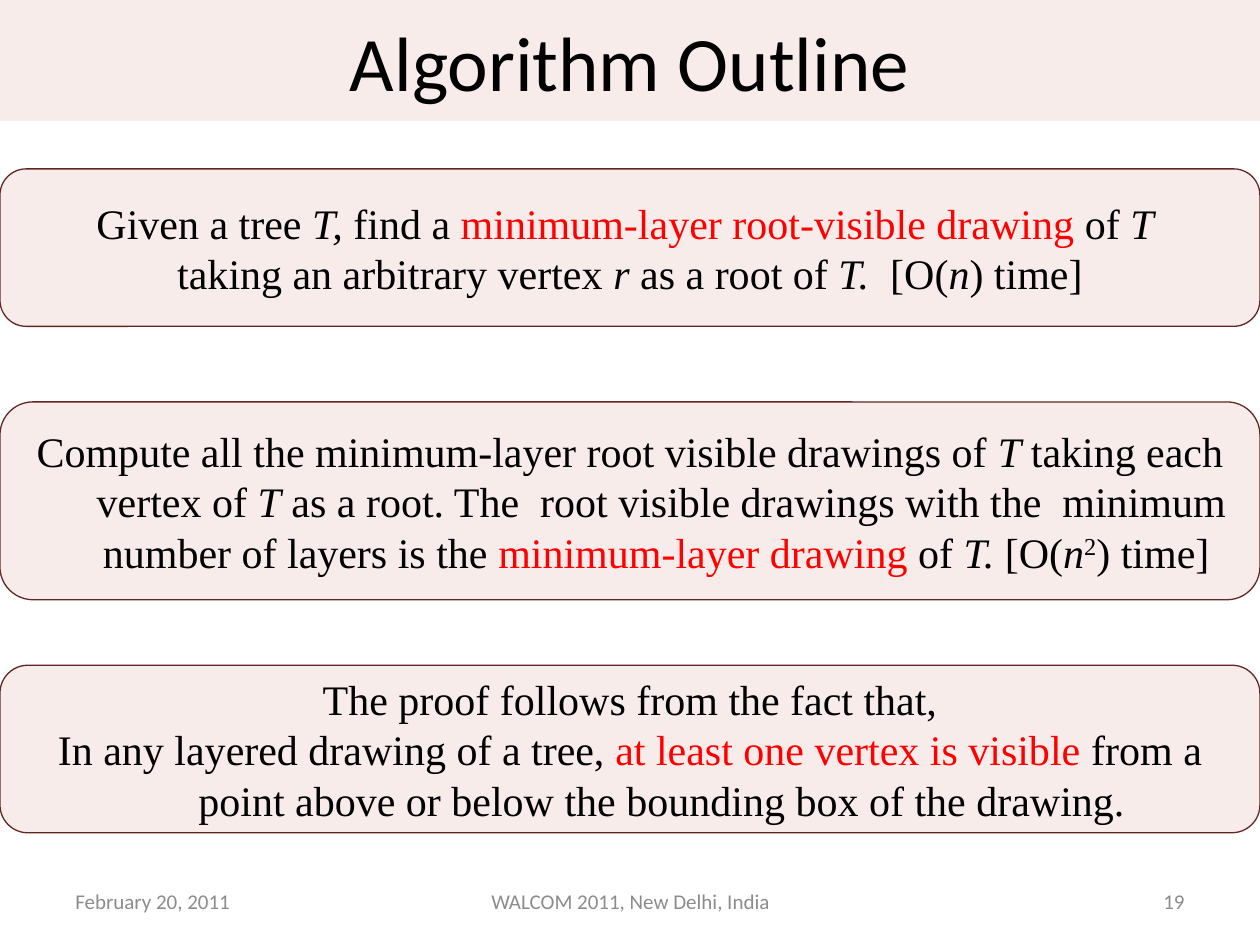
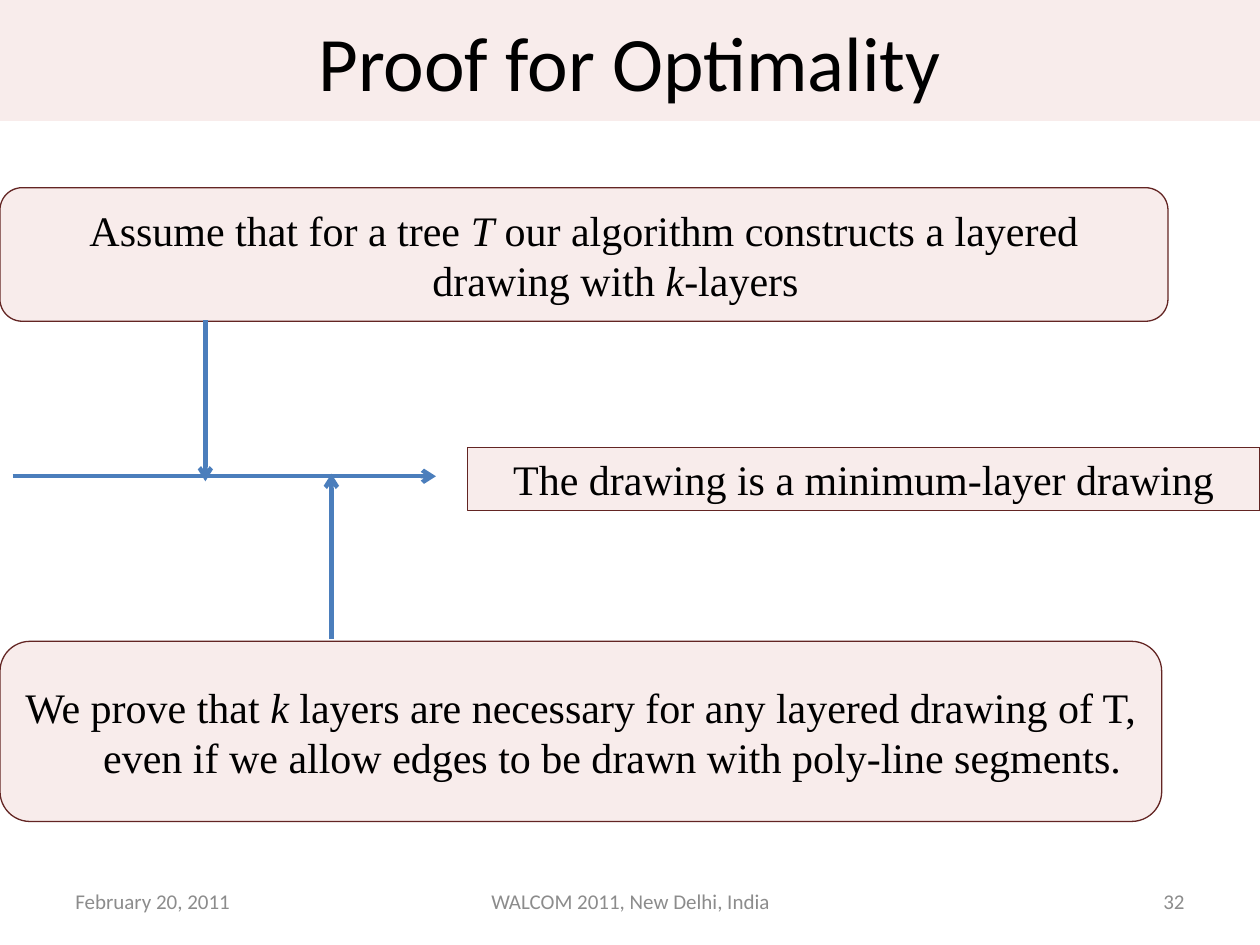
from lxml.etree import SubElement
from pptx import Presentation
from pptx.dml.color import RGBColor
from pptx.enum.shapes import MSO_CONNECTOR, MSO_SHAPE
from pptx.enum.text import MSO_ANCHOR, PP_ALIGN
from pptx.oxml.ns import qn
from pptx.util import Inches, Pt

COLORS = {
    "panel": "E6B9B8",
    "border": "632523",
    "text": "000000",
    "key": "FF0000",
    "footer": "8C8C8C",
    "arrow": "4B7EBC",
}
ITALIC = {"italic": True}
KEY = {"color": "key"}
SUPERSCRIPT = {"baseline": 30000}


def rgb(name):
    return RGBColor.from_string(COLORS[name])


def add_run(paragraph, text, font, size, color, italic=False, baseline=None):
    run = paragraph.add_run()
    run.text = text
    run.font.name = font
    run.font.size = Pt(size)
    run.font.italic = italic
    run.font.color.rgb = rgb(color)
    if baseline:
        run.font._element.set("baseline", str(baseline))


def write_text(frame, paragraphs, font="Calibri", size=12, color="text",
               align=PP_ALIGN.CENTER, hanging=0):
    frame.word_wrap = True
    frame.vertical_anchor = MSO_ANCHOR.MIDDLE
    for index, pieces in enumerate(paragraphs):
        paragraph = frame.add_paragraph() if index else frame.paragraphs[0]
        paragraph.alignment = align
        if hanging:
            properties = paragraph._p.get_or_add_pPr()
            properties.set("marL", str(Inches(hanging)))
            properties.set("indent", str(-Inches(hanging)))
        for piece in pieces:
            text, style = (piece, {}) if isinstance(piece, str) else piece
            add_run(paragraph, text, **{"font": font, "size": size, "color": color, **style})


class Deck:
    def __init__(self):
        self.presentation = Presentation()
        self.presentation.slide_width = Inches(10)
        self.presentation.slide_height = Inches(7.5)
        self.slide = None

    def start_slide(self, title, number):
        self.slide = self.presentation.slides.add_slide(self.presentation.slide_layouts[6])
        self.footer("February 20, 2011", 0.5, 2.33, PP_ALIGN.LEFT)
        self.footer("WALCOM 2011, New Delhi, India", 3.42, 3.17, PP_ALIGN.CENTER)
        self.footer(str(number), 7.17, 2.33, PP_ALIGN.RIGHT)
        band = self.panel(MSO_SHAPE.RECTANGLE, 0, 0, 10, 0.96)
        band.line.fill.background()
        write_text(band.text_frame, [[title]], size=44)

    def footer(self, text, left, width, align):
        box = self.slide.shapes.add_textbox(
            Inches(left), Inches(6.95), Inches(width), Inches(0.4))
        write_text(box.text_frame, [[text]], color="footer", align=align)

    def panel(self, kind, left, top, width, height):
        panel = self.slide.shapes.add_shape(
            kind, Inches(left), Inches(top), Inches(width), Inches(height))
        panel.shadow.inherit = False
        panel.fill.solid()
        panel.fill.fore_color.rgb = rgb("panel")
        tint = panel._element.spPr.find(qn("a:solidFill")).find(qn("a:srgbClr"))
        SubElement(tint, qn("a:alpha")).set("val", "27000")
        return panel

    def statement(self, paragraphs, left, top, width, height,
                  kind=MSO_SHAPE.ROUNDED_RECTANGLE):
        panel = self.panel(kind, left, top, width, height)
        panel.line.color.rgb = rgb("border")
        panel.line.width = Pt(0.75)
        write_text(panel.text_frame, paragraphs, font="Times New Roman", size=24, hanging=0.5)

    def arrow(self, x1, y1, x2, y2):
        arrow = self.slide.shapes.add_connector(
            MSO_CONNECTOR.STRAIGHT, Inches(x1), Inches(y1), Inches(x2), Inches(y2))
        arrow.line.color.rgb = rgb("arrow")
        arrow.line.width = Pt(2.5)
        properties = arrow._element.spPr
        SubElement(properties.find(qn("a:ln")), qn("a:tailEnd")).set("type", "arrow")
        SubElement(properties, qn("a:effectLst"))


def build_outline(deck):
    deck.start_slide("Algorithm Outline", 19)
    deck.statement([
        ["Given a tree ", ("T, ", ITALIC), "find a ",
         ("minimum-layer root-visible drawing ", KEY), "of ", ("T ", ITALIC)],
        ["taking an arbitrary vertex", (" r ", ITALIC), "as a root of ", ("T.  ", ITALIC),
         "[O(", ("n", ITALIC), ") time]"],
    ], 0, 1.34, 10, 1.25)
    deck.statement([
        ["Compute all the minimum-layer root visible drawings of ", ("T ", ITALIC),
         "taking each vertex of ", ("T", ITALIC),
         " as a root. The  root visible drawings with the  minimum number of layers is the ",
         ("minimum-layer drawing ", KEY), "of ", ("T. ", ITALIC),
         "[O(", ("n", ITALIC), ("2", SUPERSCRIPT), ") time] "],
    ], 0, 3.19, 10, 1.57)
    deck.statement([
        ["The proof follows from the fact that,"],
        ["In any layered drawing of a tree,", (" at least one vertex is visible ", KEY),
         "from a point above or below the bounding box of the drawing."],
    ], 0, 5.28, 10, 1.33)


def build_proof(deck):
    deck.start_slide("Proof for Optimality", 32)
    deck.statement([
        ["Assume that for a tree ", ("T", ITALIC),
         " our algorithm constructs a layered drawing with ", ("k", ITALIC), "-layers"],
    ], 0, 1.49, 9.27, 1.06)
    deck.statement([
        ["We prove that ", ("k ", ITALIC),
         "layers are necessary for any layered drawing of T, "
         "even if we allow edges to be drawn with poly-line segments."],
    ], 0, 5.09, 9.22, 1.43)
    deck.arrow(1.63, 2.54, 1.63, 3.82)
    deck.arrow(2.63, 5.07, 2.63, 3.76)
    deck.arrow(0.1, 3.78, 3.46, 3.78)
    deck.statement([["The drawing is a minimum-layer drawing"]],
                   3.71, 3.55, 6.29, 0.5, kind=MSO_SHAPE.RECTANGLE)


def main():
    deck = Deck()
    build_outline(deck)
    build_proof(deck)
    deck.presentation.save("out.pptx")


if __name__ == "__main__":
    main()
